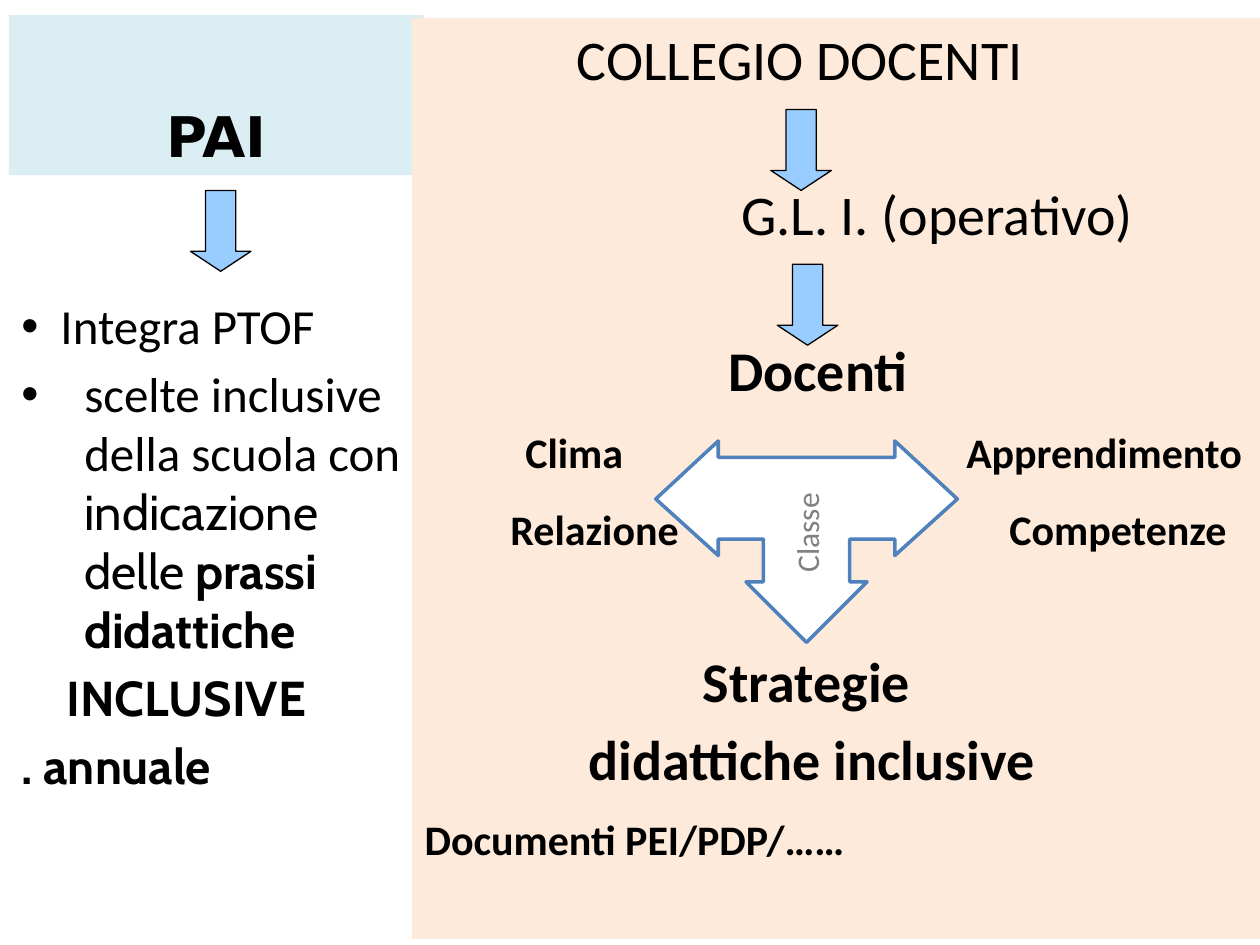
from lxml.etree import SubElement
from pptx import Presentation
from pptx.dml.color import RGBColor
from pptx.enum.shapes import MSO_SHAPE
from pptx.enum.text import MSO_ANCHOR, PP_ALIGN
from pptx.oxml.ns import qn
from pptx.util import Cm, Pt

COLORS = {"title": "DBEEF4", "panel": "FDEADA", "arrow": "99CCFF", "black": "000000",
          "white": "FFFFFF", "outline": "4F81BD", "class": "808080"}

# Content: runs (text, font, bold), left margin cm, hanging cm, bullet, space before pt
PAI_POINTS = [
    ([("Integra PTOF", "Calibri", False)], 0.79, 0.79, True, 0),
    ([("scelte inclusive della scuola con ", "Calibri", False),
      ("indicazione delle ", "Cabin", False),
      ("prassi didattiche", "Cabin", True)], 1.27, 1.27, True, 5.3),
    ([("INCLUSIVE", "Cabin", True)], 0.91, 0, False, 5.3),
    ([(". annuale", "Cabin", True)], 0, 0, False, 5.3),
]
# Content: columns (text, offset cm), size pt, bold, space before pt
BODY_LINES = [
    ([("COLLEGIO DOCENTI", 3.07)], 32, False, 0),
    ([("G.L. I. (operativo)", 6.38)], 32, False, 50.7),
    ([("Docenti", 6.12)], 32, True, 50.7),
    ([("Clima", 2.03), ("Apprendimento", 10.92)], 24, True, 13.5),
    ([("Relazione", 1.73), ("Competenze", 11.79)], 24, True, 15),
    ([("Strategie", 5.61)], 32, True, 53),
    ([("didattiche inclusive", 3.3)], 32, True, 5.9),
    ([("Documenti PEI/PDP/……", 0)], 24, True, 12.8),
]
DOWN_ARROWS = [(3.84, 3.84), (15.54, 2.21), (15.67, 5.33)]

# Three-way arrow: right half as (distance from axis, y), tip first
AXIS = 16.26
HALF_ARROW = [(0, 12.95), (1.22, 11.73), (0.87, 11.73), (0.87, 10.87), (1.78, 10.87),
              (1.78, 11.2), (3.04, 10.06), (1.78, 8.89), (1.78, 9.22)]


def rgb(name):
    return RGBColor.from_string(COLORS[name])


def paint(shape, fill, line=None, width=0.75):
    shape.shadow.inherit = False
    shape.fill.solid()
    shape.fill.fore_color.rgb = rgb(fill)
    if line:
        shape.line.color.rgb = rgb(line)
        shape.line.width = Pt(width)
    else:
        shape.line.fill.background()


def format_run(run, font, size, bold=False, color="black"):
    run.font.name = font
    run.font.size = Pt(size)
    run.font.bold = bold
    run.font.color.rgb = rgb(color)


def next_paragraph(frame, index, space_before):
    paragraph = frame.add_paragraph() if index else frame.paragraphs[0]
    paragraph.alignment = PP_ALIGN.LEFT
    paragraph.space_before = Pt(space_before)
    return paragraph


def add_tabs(paragraph, offsets):
    tabs = SubElement(paragraph._p.get_or_add_pPr(), qn("a:tabLst"))
    for offset in offsets:
        SubElement(tabs, qn("a:tab"), pos=str(Cm(offset)), algn="l")


def place(shape, left, top, width, height):
    shape.left, shape.top, shape.width, shape.height = map(Cm, (left, top, width, height))


prs = Presentation()
prs.slide_width, prs.slide_height = Cm(25.4), Cm(19.05)
slide = prs.slides.add_slide(prs.slide_layouts[5])
shapes = slide.shapes

# Title
title = shapes.title
place(title, 0.18, 0.3, 8.36, 3.23)
paint(title, "title")
title.text_frame.text = "PAI"
title.text_frame.vertical_anchor = MSO_ANCHOR.BOTTOM
title.text_frame.paragraphs[0].alignment = PP_ALIGN.CENTER
format_run(title.text_frame.paragraphs[0].runs[0], "DejaVu Sans", 32, True)

# PAI points
points = shapes.add_textbox(Cm(0.18), Cm(5.84), Cm(8.36), Cm(11.5)).text_frame
points.word_wrap = True
for index, (runs, margin, hanging, bullet, space) in enumerate(PAI_POINTS):
    paragraph = next_paragraph(points, index, space)
    properties = paragraph._p.get_or_add_pPr()
    properties.set("marL", str(Cm(margin)))
    properties.set("indent", str(Cm(-hanging)))
    if bullet:
        SubElement(properties, qn("a:buFont"), typeface="Arial")
        SubElement(properties, qn("a:buChar"), char="•")
    for text, font, bold in runs:
        run = paragraph.add_run()
        run.text = text
        format_run(run, font, 28, bold)

# Panel with the chain of bodies
panel = shapes.add_shape(MSO_SHAPE.RECTANGLE, Cm(8.31), Cm(0.36), Cm(17.09), Cm(18.57))
paint(panel, "panel")
panel.text_frame.word_wrap = True
panel.text_frame.vertical_anchor = MSO_ANCHOR.TOP
for index, (columns, size, bold, space) in enumerate(BODY_LINES):
    paragraph = next_paragraph(panel.text_frame, index, space)
    if len(columns) == 1:
        text, offset = columns[0]
        paragraph.text = text
        paragraph._p.get_or_add_pPr().set("marL", str(Cm(offset)))
    else:
        paragraph.text = "".join("\t" + text for text, _ in columns)
        add_tabs(paragraph, [offset for _, offset in columns])
    for run in paragraph.runs:
        format_run(run, "Calibri", size, bold)

# Down arrows
for left, top in DOWN_ARROWS:
    arrow = shapes.add_shape(MSO_SHAPE.DOWN_ARROW, Cm(left), Cm(top), Cm(1.22), Cm(1.63))
    arrow.adjustments[0], arrow.adjustments[1] = 0.5, 0.33
    paint(arrow, "arrow", "black")

# Three-way arrow with upward text
outline = [(AXIS + dx, y) for dx, y in HALF_ARROW]
outline += [(AXIS - dx, y) for dx, y in reversed(HALF_ARROW[1:])]
vertices = [(Cm(x), Cm(y)) for x, y in outline]
builder = shapes.build_freeform(*vertices[0])
builder.add_line_segments(vertices[1:], close=True)
class_arrow = builder.convert_to_shape()
paint(class_arrow, "white", "outline", 2)
class_text = class_arrow.text_frame
class_text.text = "Classe"
class_text.word_wrap = False
class_text.vertical_anchor = MSO_ANCHOR.MIDDLE
class_text.margin_bottom = Cm(0.6)
class_text._txBody.bodyPr.set("vert", "vert270")
class_text.paragraphs[0].alignment = PP_ALIGN.CENTER
format_run(class_text.paragraphs[0].runs[0], "Calibri", 18, color="class")

prs.save("out.pptx")
